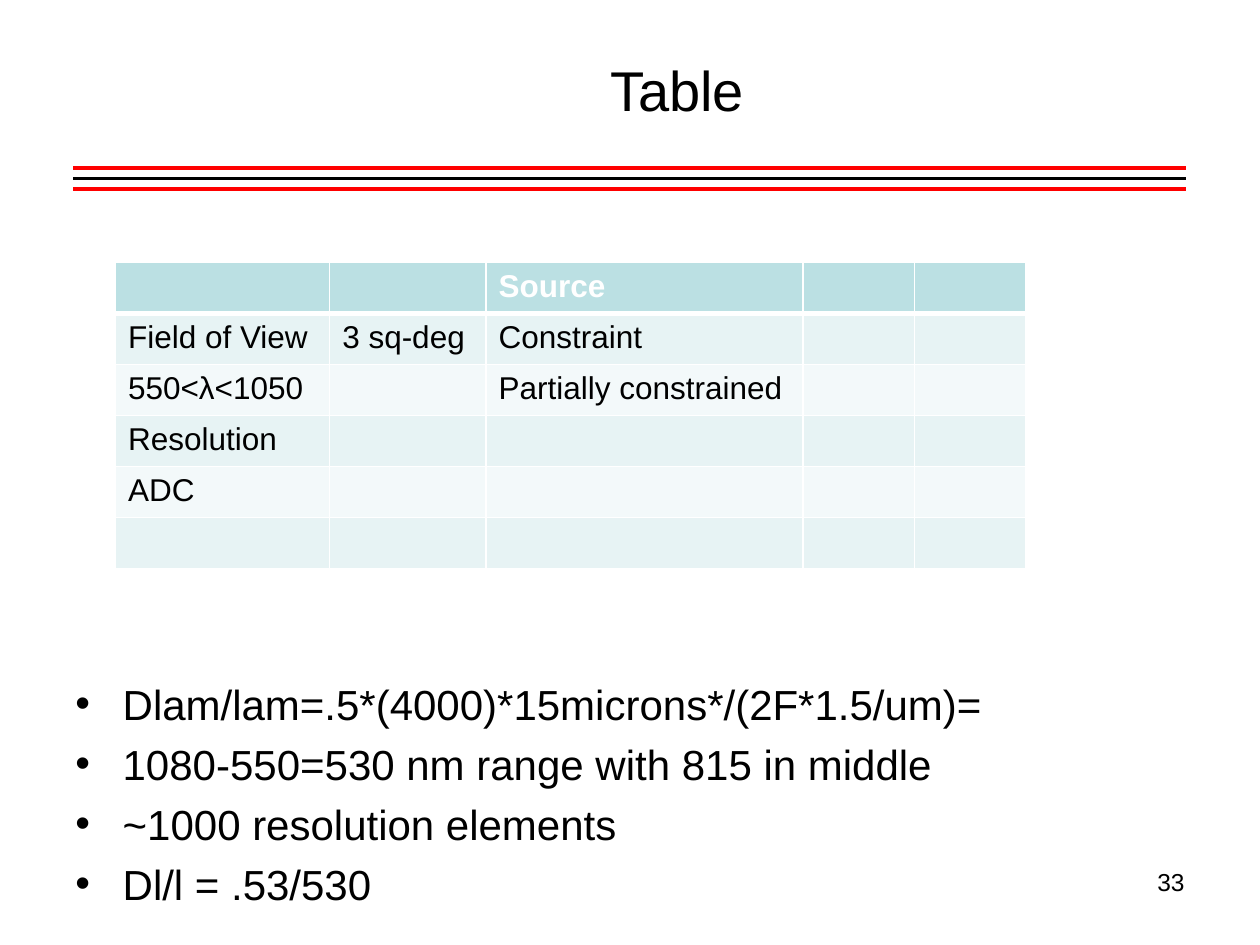
import pptx
import pptx.dml.color
import pptx.enum.shapes
import pptx.enum.text
import pptx.oxml.ns
import pptx.util
from lxml import etree

THEME = {
    "font": "Arial",
    "ink": "000000", "accent": "FF0000", "paper": "FFFFFF",
    "header": "BBE0E3", "bands": ["E7F3F4", "F3F9FA"],
    "title": 32, "body": 24, "table": 18, "number": 14,
    "rule": 2.25, "border": 1, "header_border": 3,
}
LEFT = pptx.enum.text.PP_ALIGN.LEFT
CENTER = pptx.enum.text.PP_ALIGN.CENTER
RIGHT = pptx.enum.text.PP_ALIGN.RIGHT
qn = pptx.oxml.ns.qn
rgb = pptx.dml.color.RGBColor.from_string

deck = pptx.Presentation()
deck.slide_width = pptx.util.Inches(10)
deck.slide_height = pptx.util.Inches(7.5)
slide = deck.slides.add_slide(deck.slide_layouts[6])
unit = deck.slide_width / 120


def grid(*steps):
    return [round(step * unit) for step in steps]


def write(paragraph, text, size, align=LEFT, color=THEME["ink"], bold=False):
    paragraph.text = text
    paragraph.alignment = align
    paragraph.font.name = THEME["font"]
    paragraph.font.size = pptx.util.Pt(size)
    paragraph.font.bold = bold
    paragraph.font.color.rgb = rgb(color)


for row, color in [(17, "ink"), (18, "accent"), (16, "accent")]:
    rule = slide.shapes.add_connector(
        pptx.enum.shapes.MSO_CONNECTOR.STRAIGHT, *grid(7, row, 113, row))
    rule.line.color.rgb = rgb(THEME[color])
    rule.line.width = pptx.util.Pt(THEME["rule"])
    etree.SubElement(rule._element.spPr, qn("a:effectLst"))

title = slide.shapes.add_textbox(*grid(16, 1, 97, 15)).text_frame
title.word_wrap = True
title.vertical_anchor = pptx.enum.text.MSO_ANCHOR.MIDDLE
write(title.paragraphs[0], "Table", THEME["title"], CENTER)

notes = [
    "Dlam/lam=.5*(4000)*15microns*/(2F*1.5/um)=",
    "1080-550=530 nm range with 815 in middle",
    "~1000 resolution elements",
    "Dl/l = .53/530",
]
body = slide.shapes.add_textbox(*grid(6, 64, 93, 16.5)).text_frame
body.word_wrap = True
indent = grid(4.5)[0]
for index, note in enumerate(notes):
    paragraph = body.add_paragraph() if index else body.paragraphs[0]
    properties = paragraph._p.get_or_add_pPr()
    properties.set("marL", str(indent))
    properties.set("indent", str(-indent))
    etree.SubElement(properties, qn("a:buFont"), typeface=THEME["font"])
    etree.SubElement(properties, qn("a:buChar"), char="•")
    write(paragraph, note, THEME["body"])
    if index:
        paragraph.space_before = pptx.util.Pt(5.5)

requirements = [
    ["", "", "Source", "", ""],
    ["Field of View", "3 sq-deg", "Constraint", "", ""],
    ["550<λ<1050", "", "Partially constrained", "", ""],
    ["Resolution", "", "", "", ""],
    ["ADC", "", "", "", ""],
    ["", "", "", "", ""],
]
widths = grid(20.4, 14.9, 30.2, 10.6, 10.6)
row_height = grid(4.86)[0]
table = slide.shapes.add_table(
    len(requirements), len(widths), *grid(11, 25),
    sum(widths), row_height * len(requirements)).table
for column, width in zip(table.columns, widths):
    column.width = width

for r, values in enumerate(requirements):
    table.rows[r].height = row_height
    for c, value in enumerate(values):
        cell = table.cell(r, c)
        edges = dict.fromkeys(["lnL", "lnR", "lnT", "lnB"], THEME["border"])
        if r < 2:
            edges["lnT" if r else "lnB"] = THEME["header_border"]
        for edge, points in edges.items():
            border = etree.SubElement(
                cell._tc.get_or_add_tcPr(), qn("a:" + edge),
                w=str(pptx.util.Pt(points)))
            fill = etree.SubElement(border, qn("a:solidFill"))
            etree.SubElement(fill, qn("a:srgbClr"), val=THEME["paper"])
        cell.fill.solid()
        cell.fill.fore_color.rgb = rgb(
            THEME["bands"][(r - 1) % 2] if r else THEME["header"])
        write(cell.text_frame.paragraphs[0], value, THEME["table"],
              color=THEME["ink" if r else "paper"], bold=r == 0)

number = slide.shapes.add_textbox(*grid(86, 82, 28, 6.2)).text_frame
number.word_wrap = True
write(number.paragraphs[0], "33", THEME["number"], RIGHT)

deck.save("out.pptx")
